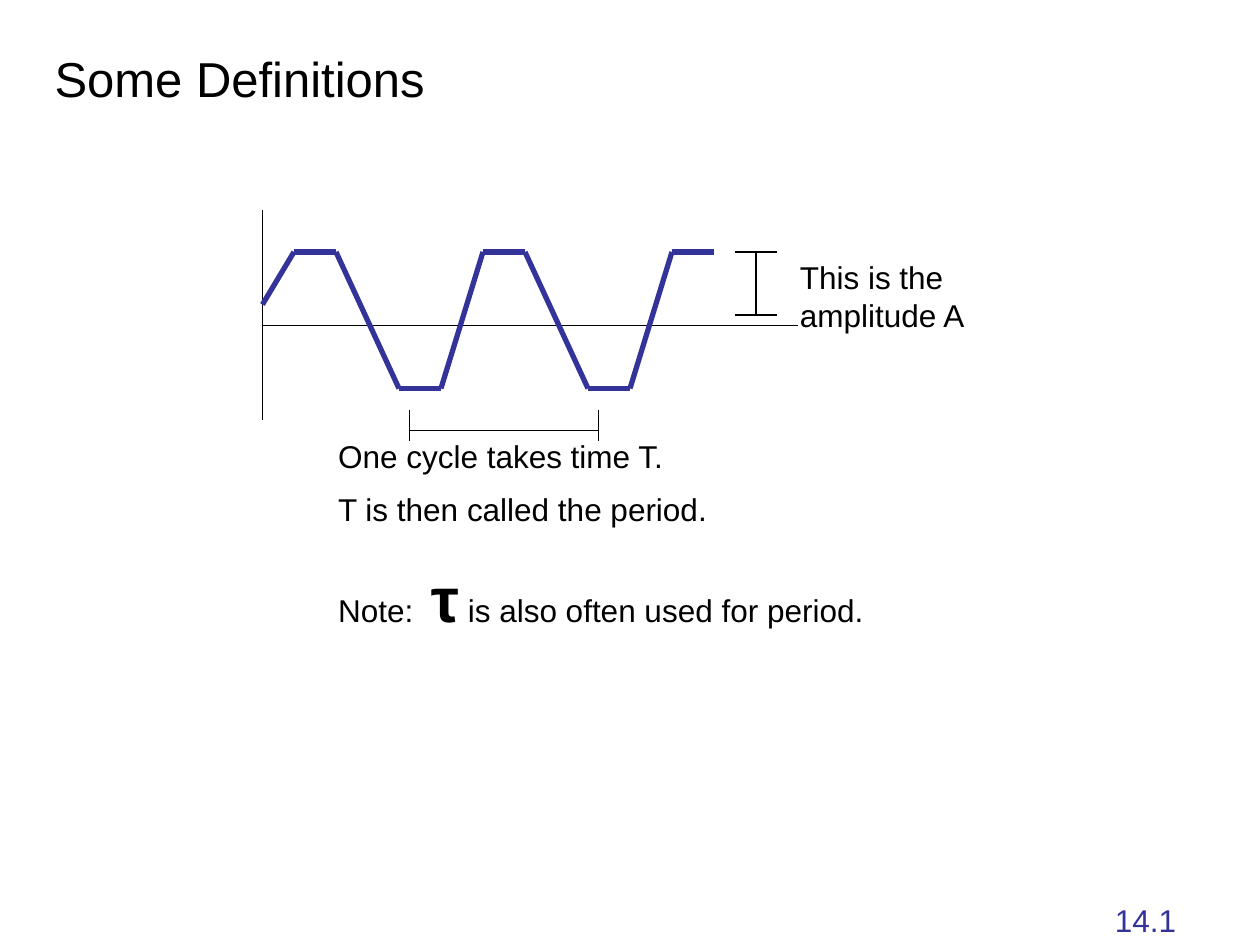
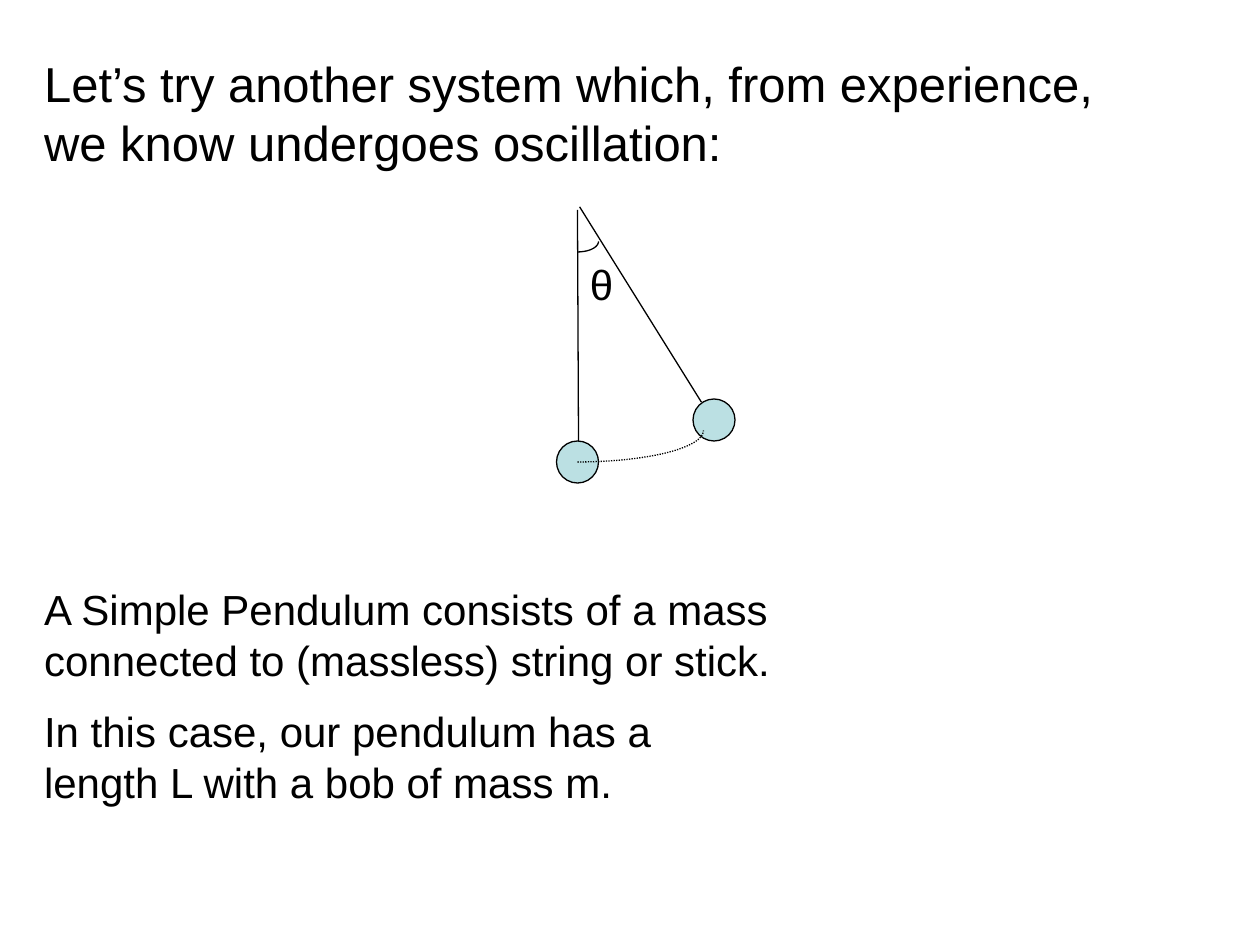
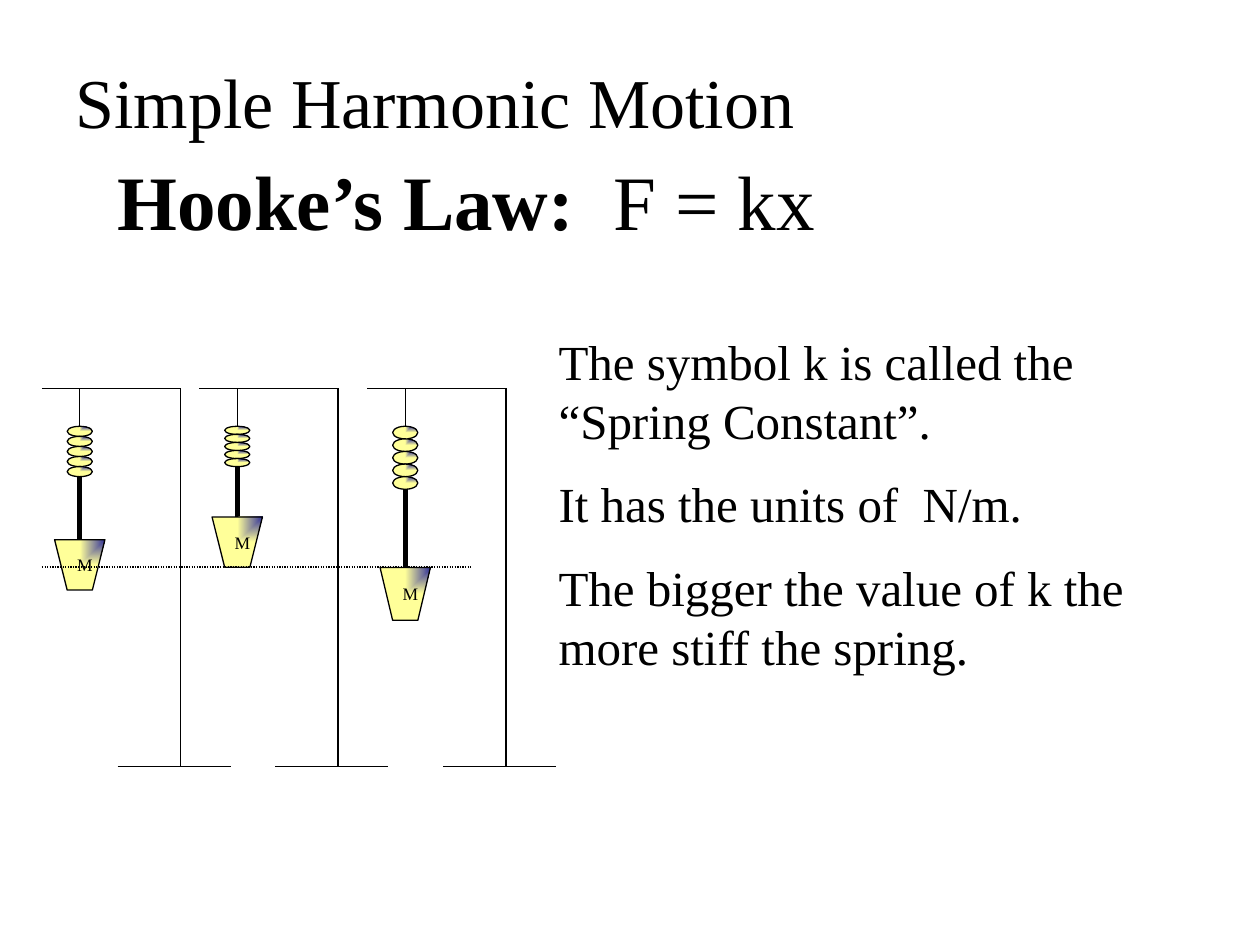
from dataclasses import dataclass
from itertools import pairwise
from math import cos, pi, sin

from lxml.etree import SubElement
from pptx import Presentation
from pptx.dml.color import RGBColor
from pptx.enum.dml import MSO_LINE_DASH_STYLE as Dash
from pptx.enum.shapes import MSO_CONNECTOR as Connector
from pptx.enum.shapes import MSO_SHAPE as Shape
from pptx.enum.text import MSO_ANCHOR as Anchor
from pptx.enum.text import MSO_AUTO_SIZE as AutoSize
from pptx.enum.text import PP_ALIGN as Align
from pptx.oxml.ns import qn
from pptx.util import Inches, Pt

BLACK = RGBColor(0x00, 0x00, 0x00)
INDIGO = RGBColor(0x33, 0x33, 0x99)
PALE_BLUE = RGBColor(0xBB, 0xE0, 0xE3)
YELLOW = RGBColor(0xFF, 0xFF, 0x99)
SANS, SERIF = "Arial", "Times New Roman"
THIN, THICK = 0.75, 3


@dataclass
class Grid:
    """A square grid with its corner and step in inches."""
    left: float
    top: float
    step: float

    def point(self, col, row):
        """Return the position of a grid crossing."""
        return Inches(self.left + col * self.step), Inches(self.top + row * self.step)

    def box(self, col, row, cols, rows):
        """Return left, top, width and height of a block of cells."""
        return *self.point(col, row), Inches(cols * self.step), Inches(rows * self.step)

    def inside(self, col, row, step):
        """Return a grid that starts at a crossing of this one."""
        return Grid(self.left + col * self.step, self.top + row * self.step, step)


PAGE = Grid(0, 0, 1 / 12)


def draw_line(page, grid, start, end, color=BLACK, width=THIN, dash=None):
    """Draw a straight line between two grid crossings."""
    line = page.shapes.add_connector(Connector.STRAIGHT, *grid.point(*start), *grid.point(*end))
    line.line.color.rgb = color
    line.line.width = Pt(width)
    if dash:
        line.line.dash_style = dash
    SubElement(line.element.spPr, qn("a:effectLst"))


def draw_lines(page, grid, ends):
    """Draw several thin black lines."""
    for start, end in ends:
        draw_line(page, grid, start, end)


def outline(shape):
    """Give a shape a thin black edge and no shadow."""
    shape.shadow.inherit = False
    shape.line.color.rgb = BLACK
    shape.line.width = Pt(THIN)
    return shape


def draw_ellipse(page, grid, *cells):
    """Add an outlined ellipse on a block of cells."""
    return outline(page.shapes.add_shape(Shape.OVAL, *grid.box(*cells)))


def draw_outline(page, grid, points, close):
    """Add a freeform through grid crossings."""
    first, *rest = [grid.point(*point) for point in points]
    builder = page.shapes.build_freeform(*first)
    builder.add_line_segments(rest, close=close)
    return outline(builder.convert_to_shape())


def draw_arc(page, grid, center, radii, dash=None):
    """Draw the lower right quarter of an ellipse."""
    steps = 24
    angles = [pi / 2 * (1 - index / steps) for index in range(steps + 1)]
    points = [(center[0] + radii[0] * cos(angle), center[1] + radii[1] * sin(angle))
              for angle in angles]
    arc = draw_outline(page, grid, points, False)
    arc.fill.background()
    if dash:
        arc.line.dash_style = dash


def shade_corner(shape):
    """Fill with yellow that darkens to indigo in the top right corner."""
    shape.fill.gradient()
    for stop, color, position in zip(shape.fill.gradient_stops, (INDIGO, YELLOW), (0, 1)):
        stop.color.rgb = color
        stop.position = position
    gradient = shape.element.spPr.find(qn("a:gradFill"))
    gradient.remove(gradient.find(qn("a:lin")))
    spread = SubElement(gradient, qn("a:path"), path="rect")
    SubElement(spread, qn("a:fillToRect"), l="100000", b="100000")


def write(shape, paras, size, font=SANS, color=BLACK):
    """Write paragraphs of text, or of (text, size, bold) spans, from the top left."""
    frame = shape.text_frame
    frame.word_wrap = True
    frame.auto_size = AutoSize.NONE
    frame.vertical_anchor = Anchor.TOP
    for index, content in enumerate(paras):
        para = frame.add_paragraph() if index else frame.paragraphs[0]
        spans = [(content, size, False)] if isinstance(content, str) else content
        largest = max(span_size for _, span_size, _ in spans)
        para.alignment = Align.LEFT
        para.space_before = Pt(largest / 2 if index else 0)
        for text, span_size, bold in spans:
            span = para.add_run()
            span.text = text
            span.font.size = Pt(span_size)
            span.font.bold = bold
            span.font.name = font
            span.font.color.rgb = color


def add_label(page, cells, paras, size, font=SANS, color=BLACK):
    """Add a text box on the page grid."""
    write(page.shapes.add_textbox(*PAGE.box(*cells)), paras, size, font, color)


def fill_placeholder(holder, cells, paras, size, font):
    """Move a placeholder and write plain, unbulleted text in it."""
    holder.left, holder.top, holder.width, holder.height = PAGE.box(*cells)
    write(holder, paras, size, font)
    for para in holder.text_frame.paragraphs:
        properties = para._p.get_or_add_pPr()
        properties.set("marL", "0")
        properties.set("indent", "0")
        SubElement(properties, qn("a:buNone"))


def add_page(deck, title, title_cells, title_size, body, body_cells, body_size, font=SANS):
    """Add a page with its title and body text."""
    page = deck.slides.add_slide(deck.slide_layouts[1])
    fill_placeholder(page.shapes.title, title_cells, [title], title_size, font)
    fill_placeholder(page.placeholders[1], body_cells, body, body_size, font)
    return page


def draw_wave(page, grid):
    """Draw the axes and a trapezoid wave."""
    draw_lines(page, grid, [((0, 0), (0, 20)), ((0, 11), (51, 11))])
    high, low = 4, 17
    wave = [(0, 9)]
    for index, col in enumerate((3, 12, 21, 30, 39)):
        row = low if index % 2 else high
        wave += [(col + index % 2, row), (col + 4 + index % 2, row)]
    for start, end in pairwise(wave):
        draw_line(page, grid, start, end, INDIGO, THICK)


def draw_measures(page, grid):
    """Mark the period below the wave and the amplitude beside it."""
    draw_lines(page, grid, [((col, 19), (col, 22)) for col in (14, 32)])
    draw_line(page, grid, (14, 21), (32, 21))
    draw_line(page, grid, (47, 4), (47, 10))
    draw_lines(page, grid, [((45, row), (49, row)) for row in (10, 4)])


def draw_pendulum(page, grid):
    """Draw the bob at rest and swung out, with its path and angle."""
    for col, row in ((11, 18), (-2, 22)):
        bob = draw_ellipse(page, grid, col, row, 4, 4)
        bob.fill.solid()
        bob.fill.fore_color.rgb = PALE_BLUE
    draw_lines(page, grid, [((0, 0), (0.1, 22)), ((0.2, -0.3), (11.8, 18.3))])
    draw_arc(page, grid, (0, 21), (12, 3), Dash.ROUND_DOT)
    draw_arc(page, grid, (0, 3), (2, 1))


def draw_spring_stand(page, grid, coil, weight_height):
    """Draw a stand with a five-coil spring and a hanging weight."""
    coil_top, coils = 3, 5
    rod_top = coil_top + coils * coil
    weight_top = {0.8: 12, 0.64: 10.2, 1: 14.2}[coil]
    weight_end = weight_top + weight_height
    draw_lines(page, grid, [((11, 0), (11, 30)), ((0, 0), (11, 0)),
                            ((3, 0), (3, 3.6)), ((6, 30), (15, 30))])
    for index in range(coils):
        shade_corner(draw_ellipse(page, grid, 2, coil_top + index * coil, 2, coil))
    draw_line(page, grid, (3, rod_top), (3, weight_top), width=THICK)
    corners = [(1, weight_top), (2, weight_end), (4, weight_end), (5, weight_top)]
    weight = draw_outline(page, grid, corners, True)
    shade_corner(weight)
    write(weight, ["M"], 10, SERIF)
    frame = weight.text_frame
    frame.vertical_anchor = Anchor.MIDDLE
    frame.margin_left, frame.margin_right = Inches(0.18), 0


def build_definitions(deck):
    """Build the page on amplitude and period."""
    notes = ["One cycle takes time T.", "T is then called the period.",
             [("Note:  ", 18, False), ("τ", 36, True),
              (" is also often used for period.", 18, False)]]
    page = add_page(deck, "Some Definitions", (4, 4, 38, 7), 28, notes, (31, 41, 67, 21), 18)
    figure = PAGE.inside(25, 20, PAGE.step)
    draw_wave(page, figure)
    draw_measures(page, figure)
    add_label(page, (75, 24, 25, 8.4), ["This is the amplitude A"], 18)
    add_label(page, (105, 85.2, 15, 4.8), ["14.1"], 18, color=INDIGO)


def build_pendulum(deck):
    """Build the page on the simple pendulum."""
    body = ["A Simple Pendulum consists of a mass connected to (massless) string or stick.",
            "In this case, our pendulum has a length L with a bob of mass m."]
    title = "Let’s try another system which, from experience, we know undergoes oscillation:"
    page = add_page(deck, title, (3, 4.5, 106, 12.4), 28, body, (3, 55, 72, 23), 24)
    draw_pendulum(page, PAGE.inside(55, 20, PAGE.step))
    add_label(page, (55, 24, 26, 6), ["θ"], 24)


def build_hooke(deck):
    """Build the page on Hooke's law and three loaded springs."""
    body = ["The symbol k is called the “Spring Constant”.", "It has the units of  N/m.",
            "The bigger the value of k the more stiff the spring."]
    page = add_page(deck, "Simple Harmonic Motion", (6, 5, 91, 9.2), 40,
                    body, (52, 31, 62, 35), 28, SERIF)
    law = [("Hooke’s Law:", 44, True), ("  F = kx", 44, False)]
    add_label(page, (10, 14, 85, 10), [law], 44, SERIF)
    for col, coil, weight_height in ((4, 0.8, 4), (19, 0.64, 4), (35, 1, 4.2)):
        draw_spring_stand(page, PAGE.inside(col, 37, 0.1), coil, weight_height)
    draw_line(page, PAGE, (4, 54), (45, 54), dash=Dash.ROUND_DOT)


def main():
    """Build and save the deck."""
    deck = Presentation()
    deck.slide_width, deck.slide_height = Inches(10), Inches(7.5)
    build_definitions(deck)
    build_pendulum(deck)
    build_hooke(deck)
    deck.save("out.pptx")


if __name__ == "__main__":
    main()
